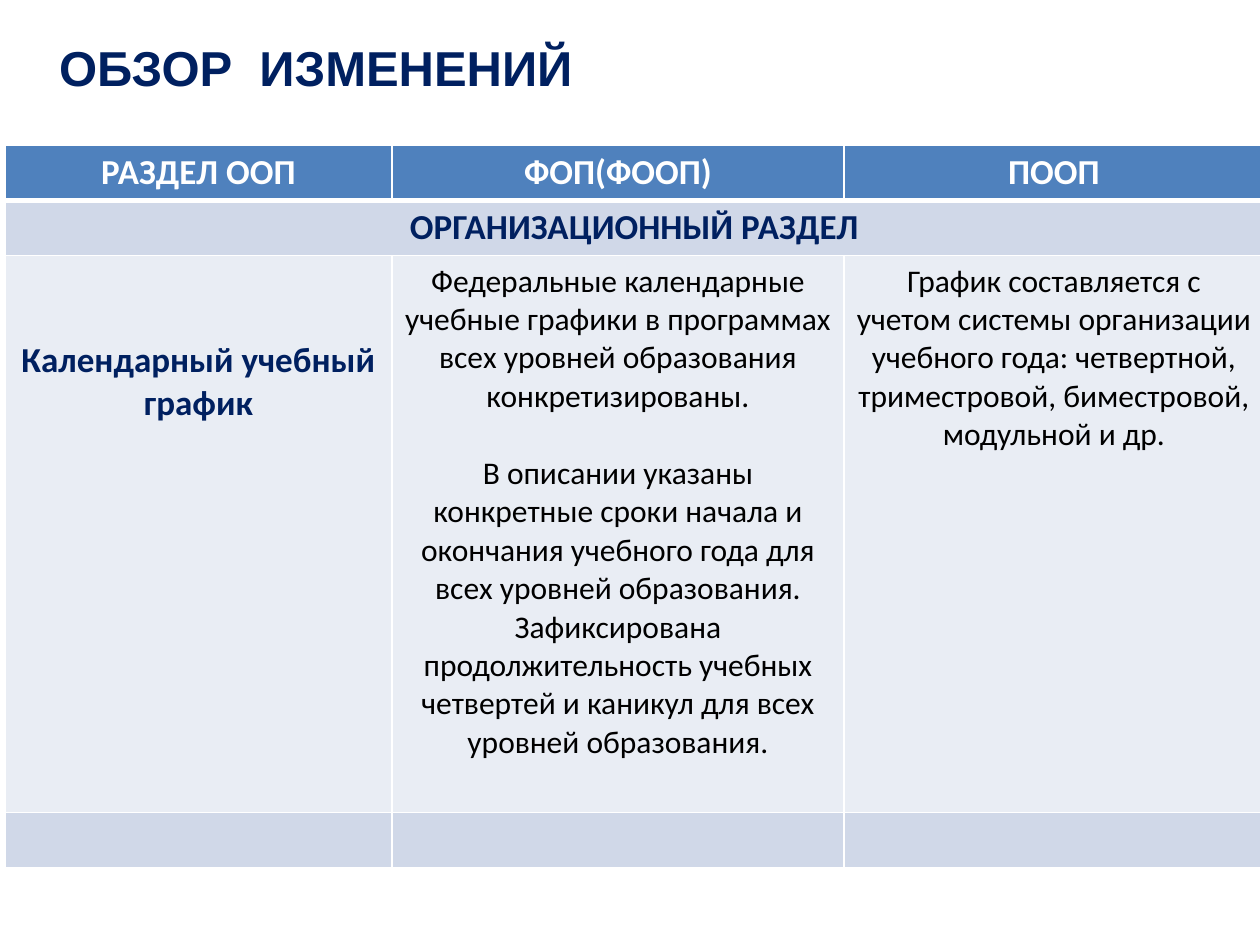
import pptx
import pptx.dml.color
import pptx.enum.text
import pptx.oxml.ns
import pptx.util
import lxml.etree

Inches = pptx.util.Inches
Pt = pptx.util.Pt
ALIGN = pptx.enum.text.PP_ALIGN

COLORS = {
    "navy": "002060",
    "white": "FFFFFF",
    "black": "000000",
    "header": "4F81BD",
    "band": "D0D8E8",
    "light": "E9EDF4",
}


def rgb(name):
    return pptx.dml.color.RGBColor.from_string(COLORS[name])


def write(paragraph, text, size=20, font="Calibri", color="navy", bold=True,
          align=ALIGN.CENTER, before=0):
    paragraph.alignment = align
    if before:
        paragraph.space_before = Pt(before)
    run = paragraph.add_run()
    run.text = text
    run.font.size = Pt(size)
    run.font.name = font
    run.font.bold = bold
    run.font.color.rgb = rgb(color)


class SlideBuilder:
    def __init__(self, slide):
        self.slide = slide

    def title(self, text, left, top, width, height):
        box = self.slide.shapes.add_textbox(
            Inches(left), Inches(top), Inches(width), Inches(height))
        box.text_frame.word_wrap = True
        write(box.text_frame.paragraphs[0], text, size=28, font="Arial",
              align=ALIGN.LEFT)

    def table(self, left, top, widths, heights):
        frame = self.slide.shapes.add_table(
            len(heights), len(widths), Inches(left), Inches(top),
            Inches(sum(widths)), Inches(sum(heights)))
        grid = frame.table
        for column, width in zip(grid.columns, widths):
            column.width = Inches(width)
        for row, height in zip(grid.rows, heights):
            row.height = Inches(height)
        return grid

    def borders(self, cell, top=1, bottom=1):
        properties = cell._tc.get_or_add_tcPr()
        qn = pptx.oxml.ns.qn
        for side, points in (("L", 1), ("R", 1), ("T", top), ("B", bottom)):
            line = lxml.etree.SubElement(
                properties, qn("a:ln" + side), w=str(Pt(points)))
            fill = lxml.etree.SubElement(line, qn("a:solidFill"))
            lxml.etree.SubElement(fill, qn("a:srgbClr"), val=COLORS["white"])

    def cell(self, cell, fill, paragraphs=(), gap=0, top=1, bottom=1, **style):
        self.borders(cell, top, bottom)
        cell.fill.solid()
        cell.fill.fore_color.rgb = rgb(fill)
        frame = cell.text_frame
        for index, text in enumerate(paragraphs):
            paragraph = frame.add_paragraph() if index else frame.paragraphs[0]
            write(paragraph, text, before=gap if index else 0, **style)


def main():
    deck = pptx.Presentation()
    deck.slide_width, deck.slide_height = Inches(10), Inches(7.5)
    builder = SlideBuilder(deck.slides.add_slide(deck.slide_layouts[6]))

    builder.title("ОБЗОР  ИЗМЕНЕНИЙ", 0.37, 0.25, 9.25, 0.57)

    changes = builder.table(0.04, 1.15, [3.07, 3.59, 3.33],
                            [0.44, 0.44, 4.42, 0.44])

    # Header row
    for column, heading in enumerate(["РАЗДЕЛ ООП", "ФОП(ФООП)", "ПООП"]):
        builder.cell(changes.cell(0, column), "header", [heading],
                     bottom=3, color="white")

    # Section row across all columns
    changes.cell(1, 0).merge(changes.cell(1, 2))
    for column in range(3):
        section = ["ОРГАНИЗАЦИОННЫЙ РАЗДЕЛ"] if column == 0 else []
        builder.cell(changes.cell(1, column), "band", section, top=3)

    # Calendar schedule row
    subject = changes.cell(2, 0)
    builder.cell(subject, "light", ["Календарный учебный график"])
    subject.margin_top = Inches(0.66)
    descriptions = [
        ["Федеральные календарные учебные графики в программах всех уровней "
         "образования конкретизированы.",
         "В описании указаны конкретные сроки начала и окончания учебного "
         "года для всех уровней образования. Зафиксирована "
         "продолжительность учебных четвертей и каникул для всех уровней "
         "образования."],
        ["График составляется с учетом системы организации учебного года: "
         "четвертной, триместровой, биместровой, модульной и др."],
    ]
    for column, description in enumerate(descriptions, start=1):
        builder.cell(changes.cell(2, column), "light", description, gap=22,
                     size=18, color="black", bold=False)

    # Empty closing row
    for column in range(3):
        builder.cell(changes.cell(3, column), "band")

    deck.save("out.pptx")


if __name__ == "__main__":
    main()
